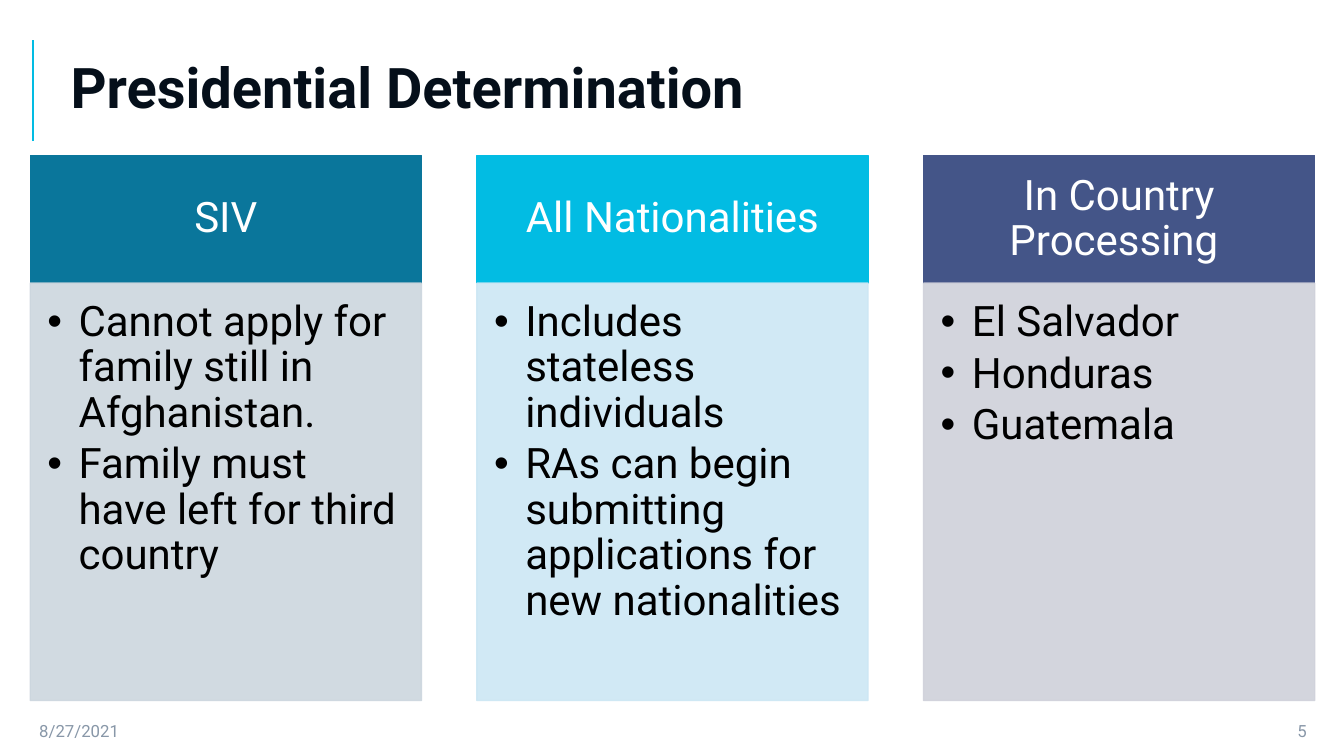
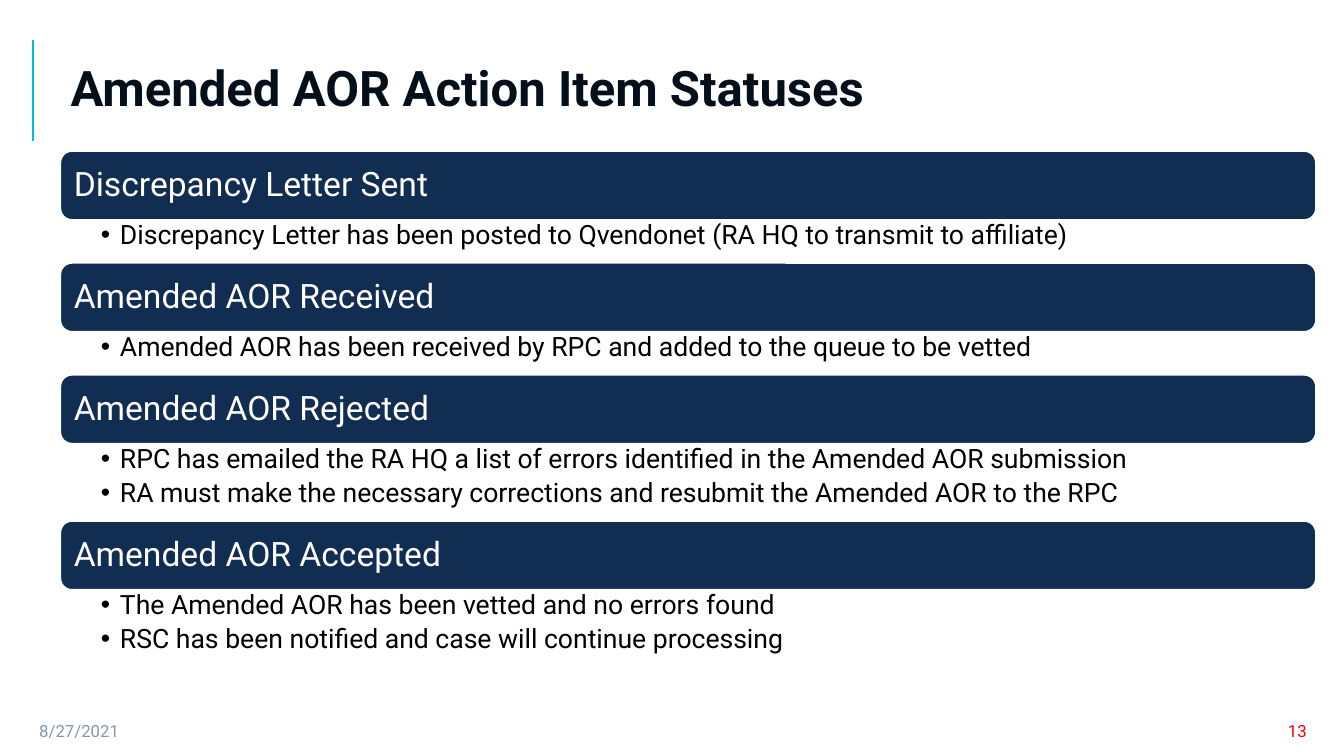
from lxml import etree
from pptx import Presentation
from pptx.dml.color import RGBColor
from pptx.enum.shapes import MSO_CONNECTOR, MSO_SHAPE
from pptx.enum.text import MSO_ANCHOR, MSO_AUTO_SIZE, PP_ALIGN
from pptx.oxml.ns import qn
from pptx.util import Inches, Pt

RECTANGLE, ROUNDED = MSO_SHAPE.RECTANGLE, MSO_SHAPE.ROUNDED_RECTANGLE
STRAIGHT = MSO_CONNECTOR.STRAIGHT
TOP, MIDDLE = MSO_ANCHOR.TOP, MSO_ANCHOR.MIDDLE
LEFT, CENTER, RIGHT = PP_ALIGN.LEFT, PP_ALIGN.CENTER, PP_ALIGN.RIGHT
NO_FIT = MSO_AUTO_SIZE.NONE

FONT = "Roboto"
DATE = "8/27/2021"
COLORS = {
    "title": "050F1A", "accent": "02BCE3", "footer": "8897A8", "alert": "FF0000",
    "white": "FFFFFF", "black": "000000", "navy": "112D51",
    "teal": "0A769B", "teal_tint": "CCD6DE", "cyan_tint": "CCE7F4",
    "indigo": "445588", "indigo_tint": "CFD1DA",
}

COLUMNS = [
    ("SIV", "teal", "teal_tint",
     ["Cannot apply for family still in Afghanistan.",
      "Family must have left for third country"]),
    ("All Nationalities", "accent", "cyan_tint",
     ["Includes stateless individuals",
      "RAs can begin submitting applications for new nationalities"]),
    ("In Country Processing ", "indigo", "indigo_tint",
     ["El Salvador", "Honduras", "Guatemala"]),
]
STATUSES = [
    ("Discrepancy Letter Sent",
     ["Discrepancy Letter has been posted to Qvendonet (RA HQ to transmit to affiliate)"]),
    ("Amended AOR Received",
     ["Amended AOR has been received by RPC and added to the queue to be vetted"]),
    ("Amended AOR Rejected",
     ["RPC has emailed the RA HQ a list of errors identified in the Amended AOR submission",
      "RA must make the necessary corrections and resubmit the Amended AOR to the RPC"]),
    ("Amended AOR Accepted",
     ["The Amended AOR has been vetted and no errors found",
      "RSC has been notified and case will continue processing"]),
]

WIDTH, HEIGHT = 13.33, 7.5
CONTENT_LEFT, CONTENT_WIDTH = 0.6, 12.45
TITLE_TOP, TITLE_HEIGHT = 0.4, 1
FOOTER_TOP, FOOTER_HEIGHT = 7.1, 0.3
COLUMN_LEFT, COLUMN_TOP, COLUMN_WIDTH, COLUMN_GAP = 0.3, 1.54, 3.88, 0.55
HEADER_HEIGHT, PANEL_HEIGHT = 1.27, 4.14
STATUS_TOP, BAR_HEIGHT, BAR_STEP = 1.5, 0.68, 0.67
LIST_PADDING, LIST_LINE = 0.1, 0.34

TITLE = dict(color="title", bold=True, anchor=MIDDLE, line_spacing=0.9)
FOOTER = dict(size=12, anchor=MIDDLE)
COLUMN_HEADER = dict(size=30, color="white", align=CENTER, anchor=MIDDLE,
                     line_spacing=0.9, insets=(0.23, 0.13, 0.23, 0.13))
COLUMN_LIST = dict(size=30, color="black", line_spacing=0.9, space_after=4.5,
                   indent=0.31, insets=(0.17, 0.17, 0.23, 0.26))
STATUS_BAR = dict(size=24, color="white", anchor=MIDDLE, line_spacing=0.9,
                  insets=(0.1, 0.1, 0.1, 0.1))
STATUS_LIST = dict(size=19, color="black", line_spacing=0.9, space_after=3.8,
                   indent=0.19, insets=(0.4, 0.03, 0.19, 0.03))


def rgb(name):
    return RGBColor.from_string(COLORS[name])


def box(*lengths):
    return [Inches(length) for length in lengths]


def add_bullet(paragraph, indent):
    properties = paragraph._p.get_or_add_pPr()
    properties.set("marL", str(Inches(indent)))
    properties.set("indent", str(-Inches(indent)))
    etree.SubElement(properties, qn("a:buFont")).set("typeface", "Arial")
    etree.SubElement(properties, qn("a:buChar")).set("char", "•")


def write(shape, lines, size, color, bold=False, align=LEFT, anchor=TOP,
          line_spacing=1.0, space_after=0, indent=0, insets=(0.1, 0.05, 0.1, 0.05)):
    frame = shape.text_frame
    frame.text = "\n".join(lines)
    sides = ("margin_left", "margin_top", "margin_right", "margin_bottom")
    frame_format = dict(zip(sides, box(*insets)), word_wrap=True,
                        auto_size=NO_FIT, vertical_anchor=anchor)
    for name, value in frame_format.items():
        setattr(frame, name, value)
    paragraph_format = dict(alignment=align, line_spacing=line_spacing,
                            space_before=Pt(0), space_after=Pt(space_after))
    font_format = dict(name=FONT, size=Pt(size), bold=bold)
    for paragraph in frame.paragraphs:
        for name, value in paragraph_format.items():
            setattr(paragraph, name, value)
        if indent:
            add_bullet(paragraph, indent)
        font = paragraph.runs[0].font
        for name, value in font_format.items():
            setattr(font, name, value)
        font.color.rgb = rgb(color)


def add_text(slide, area, lines, **text_format):
    write(slide.shapes.add_textbox(*box(*area)), lines, **text_format)


def add_panel(slide, kind, area, fill, line, lines, opacity=100, **text_format):
    shape = slide.shapes.add_shape(kind, *box(*area))
    shape.shadow.inherit = False
    shape.fill.solid()
    shape.fill.fore_color.rgb = rgb(fill)
    shape.line.color.rgb = rgb(line)
    shape.line.width = Pt(1)
    if opacity < 100:
        for color in shape._element.spPr.iter(qn("a:srgbClr")):
            etree.SubElement(color, qn("a:alpha")).set("val", str(opacity * 1000))
    write(shape, lines, **text_format)


def add_base_slide(presentation, title, title_size, number, number_color):
    slide = presentation.slides.add_slide(presentation.slide_layouts.get_by_name("Title Only"))
    rule = slide.shapes.add_connector(
        STRAIGHT, *box(0.33, TITLE_TOP + TITLE_HEIGHT, 0.33, TITLE_TOP))
    rule.line.color.rgb = rgb("accent")
    rule.line.width = Pt(1.5)
    etree.SubElement(rule._element.spPr, qn("a:effectLst"))
    heading = slide.shapes.title
    area = box(CONTENT_LEFT, TITLE_TOP, CONTENT_WIDTH, TITLE_HEIGHT)
    for name, value in zip(("left", "top", "width", "height"), area):
        setattr(heading, name, value)
    write(heading, [title], size=title_size, **TITLE)
    add_text(slide, (9.68, FOOTER_TOP, 3.38, FOOTER_HEIGHT), [number],
             color=number_color, align=RIGHT, **FOOTER)
    add_text(slide, (0.29, FOOTER_TOP, 3.29, FOOTER_HEIGHT), [DATE],
             color="footer", **FOOTER)
    return slide


def build_determination(presentation):
    slide = add_base_slide(presentation, "Presidential Determination", 40, "5", "footer")
    for index, (header, color, tint, items) in enumerate(COLUMNS):
        left = COLUMN_LEFT + index * (COLUMN_WIDTH + COLUMN_GAP)
        add_panel(slide, RECTANGLE, (left, COLUMN_TOP, COLUMN_WIDTH, HEADER_HEIGHT),
                  color, color, [header], **COLUMN_HEADER)
        add_panel(slide, RECTANGLE,
                  (left, COLUMN_TOP + HEADER_HEIGHT, COLUMN_WIDTH, PANEL_HEIGHT),
                  tint, tint, items, opacity=90, **COLUMN_LIST)


def build_statuses(presentation):
    slide = add_base_slide(presentation, "Amended AOR Action Item Statuses", 35, "13", "alert")
    top = STATUS_TOP
    for status, items in STATUSES:
        add_panel(slide, ROUNDED, (CONTENT_LEFT, top, CONTENT_WIDTH, BAR_HEIGHT),
                  "navy", "white", [status], **STATUS_BAR)
        list_height = LIST_PADDING + LIST_LINE * len(items)
        add_text(slide, (CONTENT_LEFT, top + BAR_STEP, CONTENT_WIDTH, list_height),
                 items, **STATUS_LIST)
        top += BAR_STEP + list_height


def main():
    presentation = Presentation()
    presentation.slide_width, presentation.slide_height = box(WIDTH, HEIGHT)
    build_determination(presentation)
    build_statuses(presentation)
    presentation.save("out.pptx")


if __name__ == "__main__":
    main()
